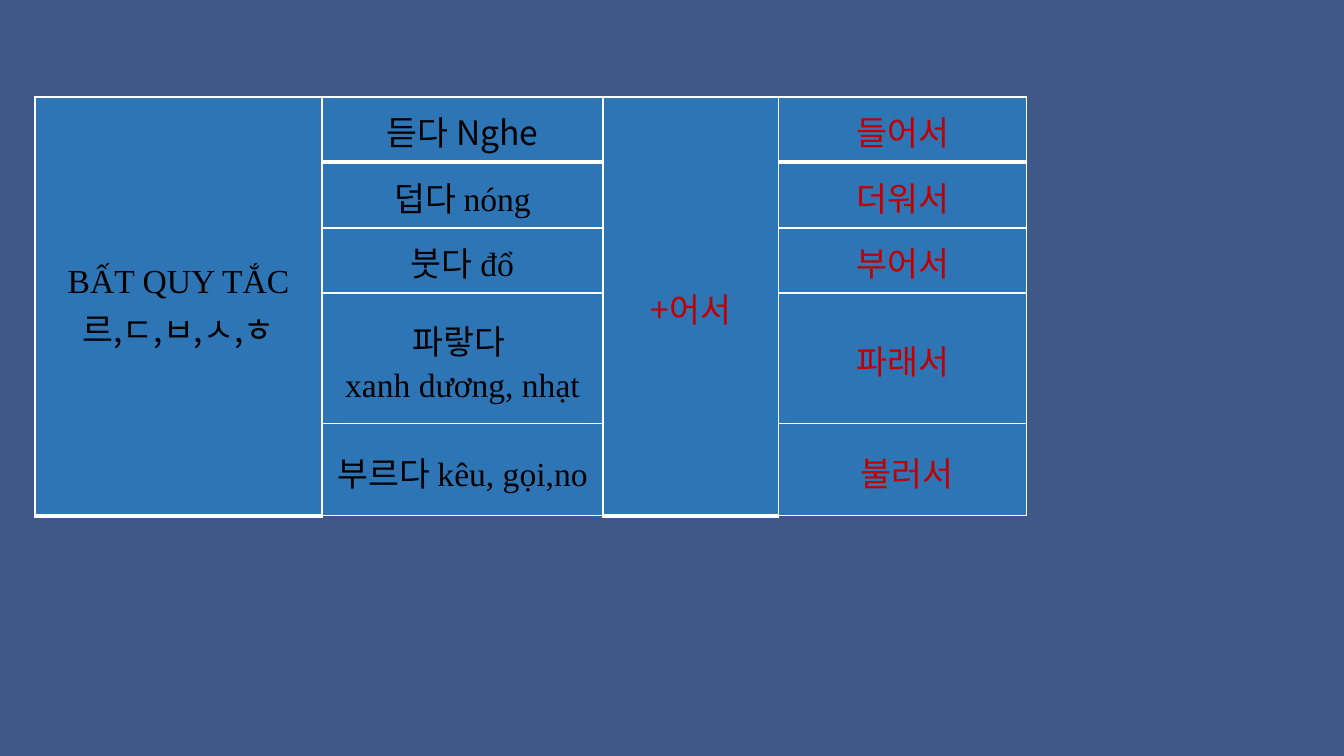
from lxml import etree
from pptx import Presentation
from pptx import util as u
from pptx.dml.color import RGBColor
from pptx.enum import text
from pptx.oxml.ns import qn

C = {"bg": "405888", "cell": "2E75B6", "line": "FFFFFF",
     "ink": "000000", "answer": "C00000"}
KOREAN, VIET = "Noto Sans CJK KR", "Times New Roman"

RULE = [[("BẤT QUY TẮC", VIET)], [("르,ㄷ,ㅂ,ㅅ,ㅎ", KOREAN)]]
ENDING = "+어서"
VERBS = [
    ([[("듣다 Nghe", KOREAN)]], "들어서"),
    ([[("덥다 ", KOREAN), ("nóng", VIET)]], "더워서"),
    ([[("붓다 ", KOREAN), ("đổ", VIET)]], "부어서"),
    ([[("파랗다 ", KOREAN)], [("xanh dương, nhạt", VIET)]], "파래서"),
    ([[("부르다 ", KOREAN), ("kêu, gọi,no", VIET)]], " 불러서"),
]
COLS = [287, 281, 176, 248]
ROWS = [65, 66, 65, 131, 92]
LEFT, TOP = 35, 97
MERGED = (0, 2)
THIN, THICK = 1, 3


def px(n):
    return u.Emu(round(n * 914400 / 100.8))


def write(cell, paragraphs, color=C["ink"], size=24):
    tf = cell.text_frame
    for i, runs in enumerate(paragraphs):
        p = tf.add_paragraph() if i else tf.paragraphs[0]
        p.alignment = text.PP_ALIGN.CENTER
        p.line_spacing = 1.07
        for words, font in runs:
            r = p.add_run()
            r.text = words
            r.font.size = u.Pt(size)
            r.font.name = font
            r.font.color.rgb = RGBColor.from_string(color)
            if font == KOREAN:
                ea = etree.SubElement(r.font._element, qn("a:ea"))
                ea.set("typeface", font)


def border(cell, **widths):
    tc_pr = cell._tc.get_or_add_tcPr()
    for side in "LRTB":
        ln = etree.SubElement(tc_pr, qn("a:ln" + side))
        ln.set("w", str(u.Pt(widths.get(side, THIN))))
        fill = etree.SubElement(ln, qn("a:solidFill"))
        etree.SubElement(fill, qn("a:srgbClr")).set("val", C["line"])


prs = Presentation()
prs.slide_width, prs.slide_height = px(1344), px(756)
s = prs.slides.add_slide(prs.slide_layouts[6])
s.background.fill.solid()
s.background.fill.fore_color.rgb = RGBColor.from_string(C["bg"])

table = s.shapes.add_table(len(ROWS), len(COLS), px(LEFT), px(TOP),
                           px(sum(COLS)), px(sum(ROWS))).table
table.first_row = table.horz_banding = False
for col, width in zip(table.columns, COLS):
    col.width = px(width)
for row, height in zip(table.rows, ROWS):
    row.height = px(height)

last = len(ROWS) - 1
for i in range(len(ROWS)):
    for j in range(len(COLS)):
        cell = table.cell(i, j)
        cell.margin_left = cell.margin_right = px(7)
        cell.margin_top = cell.margin_bottom = 0
        cell.vertical_anchor = text.MSO_ANCHOR.MIDDLE
        if j in MERGED:
            border(cell, B=THICK)
        else:
            border(cell, T=THICK if i == 1 else THIN,
                   B=THICK if i == 0 else THIN)
        cell.fill.solid()
        cell.fill.fore_color.rgb = RGBColor.from_string(C["cell"])

for j in MERGED:
    table.cell(0, j).merge(table.cell(last, j))
write(table.cell(0, 0), RULE)
write(table.cell(0, 2), [[(ENDING, KOREAN)]], color=C["answer"])
for i, (verb, answer) in enumerate(VERBS):
    write(table.cell(i, 1), verb)
    write(table.cell(i, 3), [[(answer, KOREAN)]], color=C["answer"])

prs.save("out.pptx")
